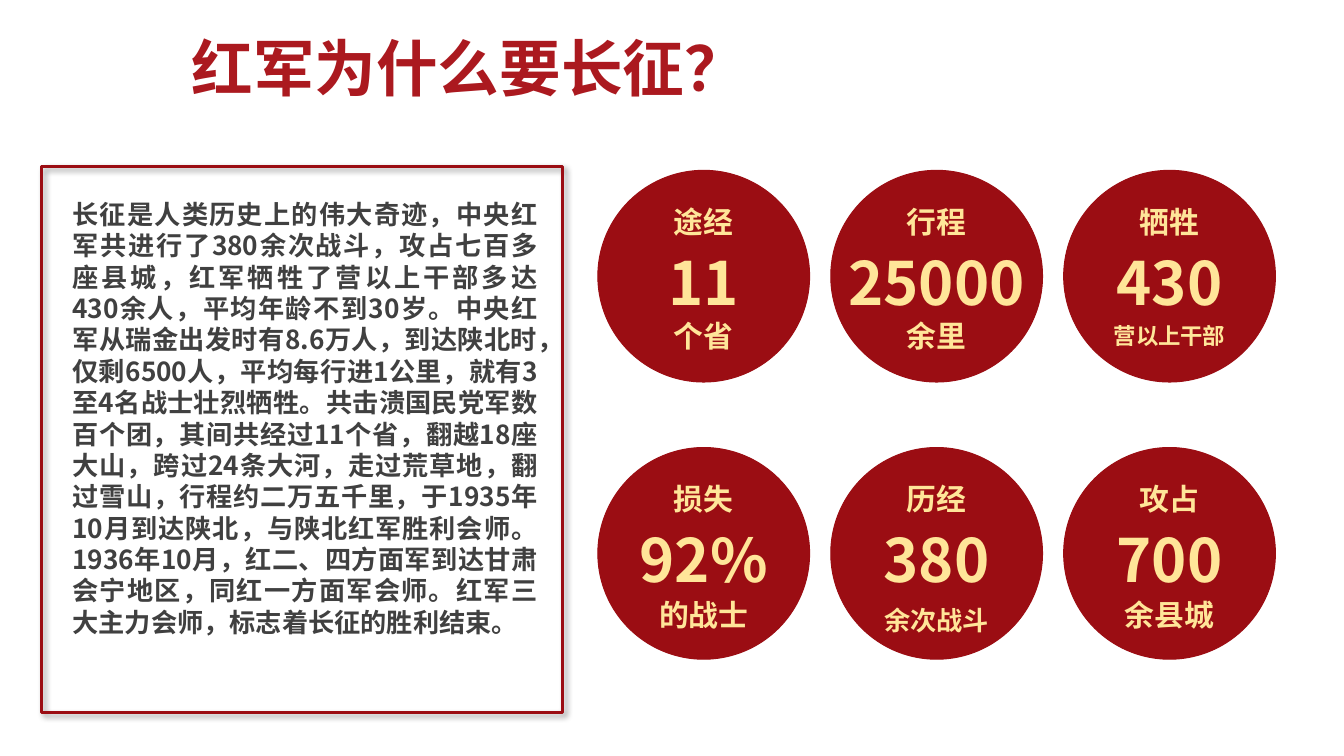
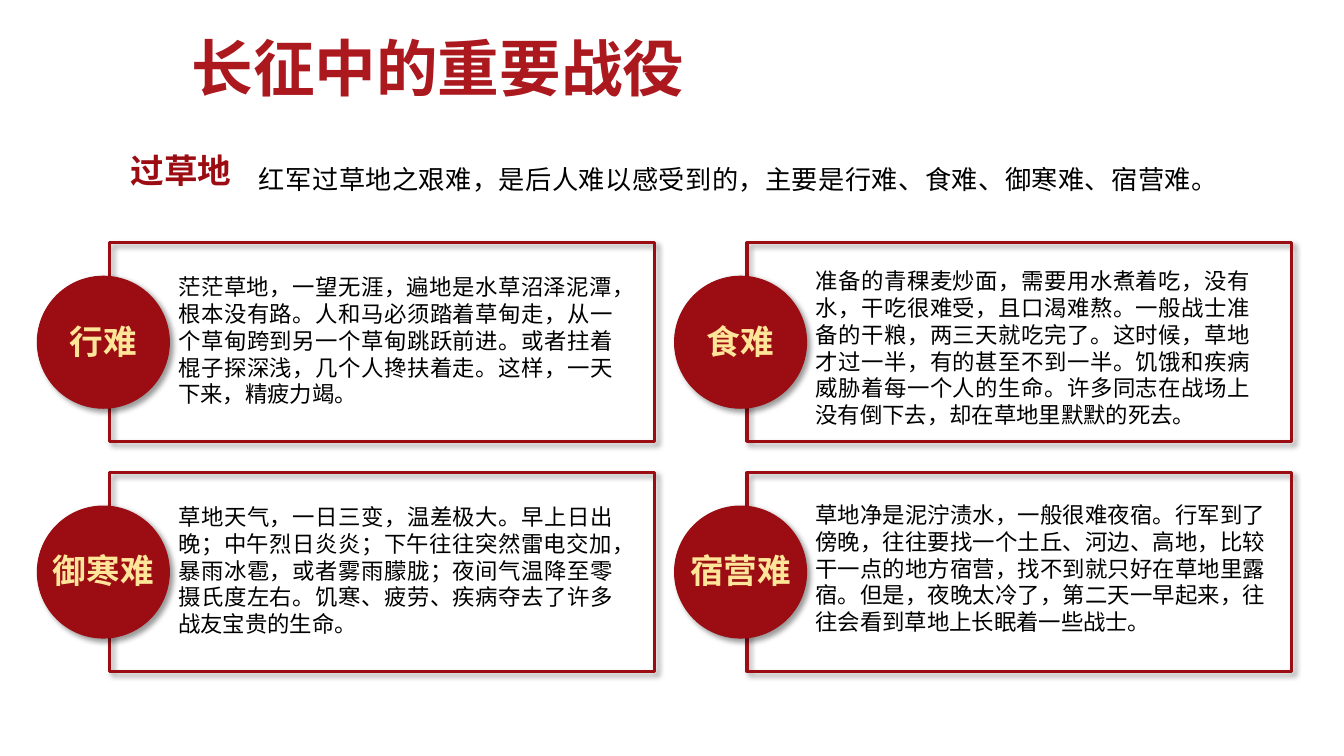
from itertools import product

from lxml.etree import SubElement
from pptx import Presentation
from pptx.dml.color import RGBColor
from pptx.enum.shapes import MSO_SHAPE
from pptx.enum.text import MSO_AUTO_SIZE, PP_ALIGN
from pptx.oxml import parse_xml
from pptx.oxml.ns import nsdecls, qn
from pptx.util import Inches, Pt

# Shared style
FONT = "Noto Sans CJK SC"
TITLE_RED = RGBColor(0xAB, 0x19, 0x1F)
DEEP_RED = RGBColor(0x9B, 0x0D, 0x13)
GOLD = RGBColor(0xFF, 0xE5, 0x99)
GREY = RGBColor(0x40, 0x40, 0x40)
BLACK = RGBColor(0, 0, 0)
LINE_PITCH = 1.2  # line height as a multiple of the text size

TITLE = dict(size=44, color=TITLE_RED, bold=True)
STORY = dict(size=18.7, color=GREY, bold=True, align=PP_ALIGN.JUSTIFY)
INTRO = dict(size=18.7, color=BLACK, align=PP_ALIGN.JUSTIFY)
DETAIL = dict(size=16, color=BLACK, align=PP_ALIGN.JUSTIFY)
HEADING = dict(size=24, color=DEEP_RED, bold=True, align=PP_ALIGN.CENTER)
BADGE = dict(size=24, color=GOLD, bold=True, align=PP_ALIGN.CENTER)
LABEL = dict(size=21.3, color=GOLD, bold=True, align=PP_ALIGN.CENTER)
NUMBER = dict(size=42.7, color=GOLD, bold=True, align=PP_ALIGN.CENTER)

# Content
REASON_TITLE = "红军为什么要长征？"
REASON_STORY = (
    "长征是人类历史上的伟大奇迹，中央红军共进行了380余次战斗，攻占七百多座县城，"
    "红军牺牲了营以上干部多达430余人，平均年龄不到30岁。中央红军从瑞金出发时有8.6万人，"
    "到达陕北时，仅剩6500人，平均每行进1公里，就有3至4名战士壮烈牺牲。"
    "共击溃国民党军数百个团，其间共经过11个省，翻越18座大山，跨过24条大河，走过荒草地，"
    "翻过雪山，行程约二万五千里，于1935年10月到达陕北，与陕北红军胜利会师。"
    "1936年10月，红二、四方面军到达甘肃会宁地区，同红一方面军会师。"
    "红军三大主力会师，标志着长征的胜利结束。"
)
# label, number, unit, unit size, unit offset from the circle's top; row by row
FIGURES = [
    ("途经", "11", "个省", 21.3, 1.41),
    ("行程", "25000", "余里", 21.3, 1.41),
    ("牺牲", "430", "营以上干部", 16, 1.46),
    ("损失", "92%", "的战士", 21.3, 1.43),
    ("历经", "380", "余次战斗", 18.7, 1.51),
    ("攻占", "700", "余县城", 21.3, 1.43),
]

BATTLE_TITLE = "长征中的重要战役"
BATTLE_NAME = "过草地"
BATTLE_INTRO = "红军过草地之艰难，是后人难以感受到的，主要是行难、食难、御寒难、宿营难。"
# badge, detail, detail offset from the frame's top, detail width; column by column
HARDSHIPS = [
    ("行难",
     "茫茫草地，一望无涯，遍地是水草沼泽泥潭，根本没有路。人和马必须踏着草甸走，"
     "从一个草甸跨到另一个草甸跳跃前进。或者拄着棍子探深浅，几个人搀扶着走。"
     "这样，一天下来，精疲力竭。", 0.25, 4.51),
    ("御寒难",
     "草地天气，一日三变，温差极大。早上日出晚；中午烈日炎炎；下午往往突然雷电交加，"
     "暴雨冰雹，或者雾雨朦胧；夜间气温降至零摄氏度左右。"
     "饥寒、疲劳、疾病夺去了许多战友宝贵的生命。", 0.25, 4.51),
    ("食难",
     "准备的青稞麦炒面，需要用水煮着吃，没有水，干吃很难受，且口渴难熬。"
     "一般战士准备的干粮，两三天就吃完了。这时候，草地才过一半，有的甚至不到一半。"
     "饥饿和疾病威胁着每一个人的生命。许多同志在战场上没有倒下去，"
     "却在草地里默默的死去。", 0.19, 4.51),
    ("宿营难",
     "草地净是泥泞渍水，一般很难夜宿。行军到了傍晚，往往要找一个土丘、河边、高地，"
     "比较干一点的地方宿营，找不到就只好在草地里露宿。但是，夜晚太冷了，"
     "第二天一早起来，往往会看到草地上长眠着一些战士。", 0.23, 4.66),
]


def add_text(shapes, text, left, top, width, height, style):
    box = shapes.add_textbox(Inches(left), Inches(top), Inches(width), Inches(height))
    frame = box.text_frame
    frame.word_wrap = True
    frame.auto_size = MSO_AUTO_SIZE.SHAPE_TO_FIT_TEXT
    para = frame.paragraphs[0]
    para.alignment = style.get("align", PP_ALIGN.LEFT)
    para.line_spacing = Pt(round(style["size"] * LINE_PITCH, 1))
    span = para.add_run()
    span.text = text
    font_values = dict(name=FONT, size=Pt(style["size"]), bold=style.get("bold", False))
    for name, value in font_values.items():
        setattr(span.font, name, value)
    span.font.color.rgb = style["color"]
    SubElement(span.font._element, qn("a:ea"), typeface=FONT)
    return span


def add_shadow(shape):
    shape._element.spPr.append(parse_xml(
        f'<a:effectLst {nsdecls("a")}>'
        f'<a:outerShdw blurRad="{Pt(4)}" dist="{Pt(3)}" dir="2700000" algn="tl" rotWithShape="0">'
        '<a:srgbClr val="000000"><a:alpha val="40000"/></a:srgbClr>'
        '</a:outerShdw></a:effectLst>'))


def add_panel(shapes, kind, left, top, width, height, line_width, filled, shadow):
    shape = shapes.add_shape(kind, Inches(left), Inches(top), Inches(width), Inches(height))
    if filled:
        shape.fill.solid()
        shape.fill.fore_color.rgb = DEEP_RED
    else:
        shape.fill.background()
    shape.line.color.rgb = DEEP_RED
    shape.line.width = Pt(line_width)
    if shadow:
        add_shadow(shape)
    else:
        shape.shadow.inherit = False


def add_frame(shapes, left, top, width, height):
    add_panel(shapes, MSO_SHAPE.RECTANGLE, left, top, width, height, 2.25, False, True)


def add_circle(shapes, left, top, size, shadow):
    add_panel(shapes, MSO_SHAPE.OVAL, left, top, size, size, 0.75, True, shadow)


def add_page(deck, title):
    page = deck.slides.add_slide(deck.slide_layouts[6])
    span = add_text(page.shapes, title, 1.8, 0.25, 9.22, 0.84, TITLE)
    span.font._element.insert(0, parse_xml(
        f'<a:ln {nsdecls("a")} w="{Pt(0.75)}"><a:solidFill>'
        '<a:srgbClr val="FFFFFF"/></a:solidFill></a:ln>'))
    return page


def build_reason(deck):
    page = add_page(deck, REASON_TITLE)
    add_text(page.shapes, REASON_STORY, 0.62, 1.92, 4.81, 4.5, STORY)
    add_frame(page.shapes, 0.41, 1.65, 5.17, 5.42)

    # Grid of figures: two rows of three circles
    size = 2.1
    for (row, column), figure in zip(product(range(2), range(3)), FIGURES):
        label, number, unit, unit_size, unit_offset = figure
        left, top = 5.93 + 2.31 * column, 1.69 + 2.75 * row
        shapes = page.shapes.add_group_shape().shapes
        add_circle(shapes, left, top, size, False)
        add_text(shapes, number, left, top + 0.7, size, 0.82, NUMBER)
        add_text(shapes, unit, left, top + unit_offset, size, 0.46,
                 dict(LABEL, size=unit_size))
        add_text(shapes, label, left, top + 0.28, size, 0.46, LABEL)


def build_battle(deck):
    page = add_page(deck, BATTLE_TITLE)
    add_text(page.shapes, BATTLE_INTRO, 2.47, 1.57, 9.45, 0.42, INTRO)
    add_text(page.shapes, BATTLE_NAME, 1, 1.44, 1.59, 0.5, HEADING)

    # Hardships: two columns of two frames, each with a round badge
    size = 1.31
    for (column, row), hardship in zip(product(range(2), repeat=2), HARDSHIPS):
        badge, detail, offset, width = hardship
        left, top = 1.09 + 6.32 * column, 2.41 + 2.28 * row
        add_frame(page.shapes, left, top, 5.4, 1.97)
        add_text(page.shapes, detail, left + 0.58, top + offset, width, 1.45, DETAIL)
        shapes = page.shapes.add_group_shape().shapes
        add_circle(shapes, left - 0.72, top + 0.33, size, True)
        add_text(shapes, badge, left - 0.72, top + 0.72, size, 0.5, BADGE)


def main():
    deck = Presentation()
    deck.slide_width, deck.slide_height = Inches(13.33), Inches(7.5)
    build_reason(deck)
    build_battle(deck)
    deck.save("out.pptx")


if __name__ == "__main__":
    main()
